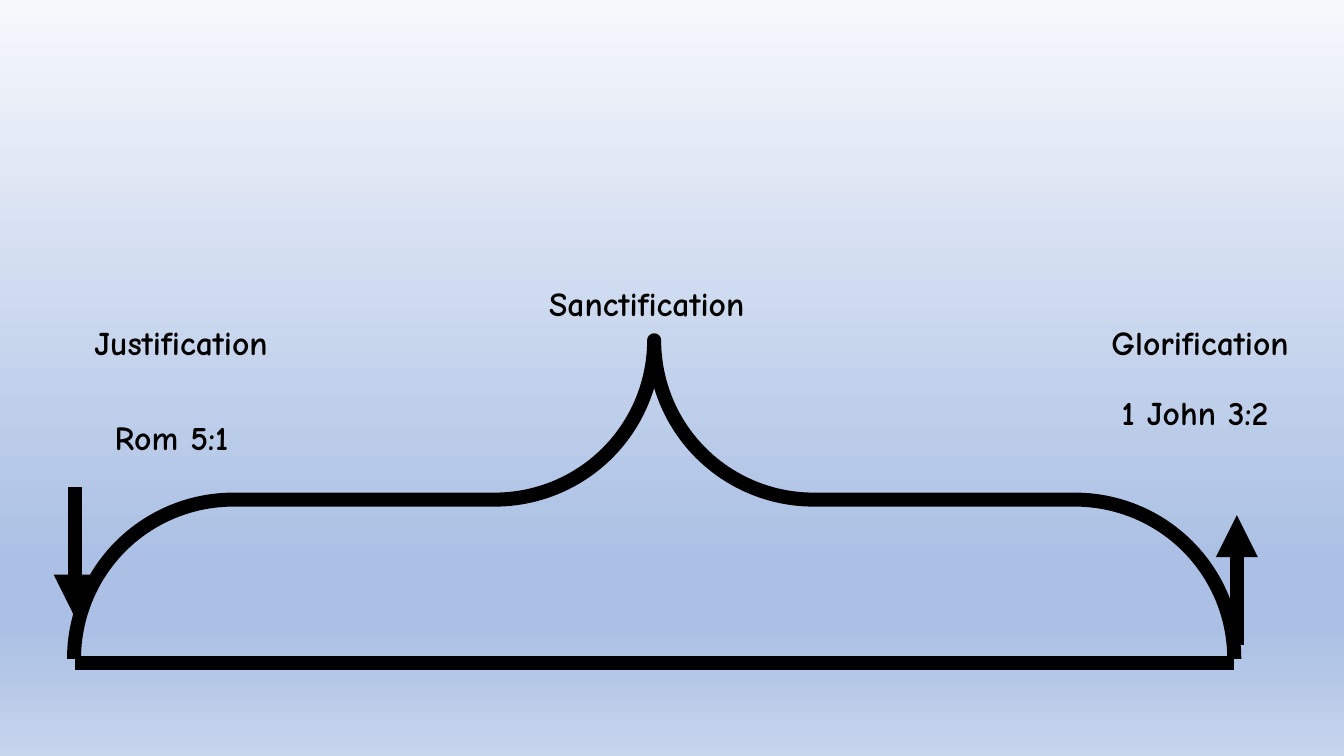
from lxml.etree import SubElement
from pptx import Presentation
from pptx.dml.color import RGBColor
from pptx.enum.shapes import MSO_CONNECTOR, MSO_SHAPE
from pptx.enum.text import MSO_AUTO_SIZE
from pptx.oxml.ns import qn
from pptx.util import Cm, Pt

BLACK = RGBColor(0x00, 0x00, 0x00)
PALE = RGBColor(0xF6, 0xF8, 0xFC)
BLUE = RGBColor(0xAB, 0xC0, 0xE4)
LIGHT_BLUE = RGBColor(0xC7, 0xD5, 0xED)
FONT = "Comic Neue"
STROKE = Pt(10)

presentation = Presentation()
presentation.slide_width = Cm(33.87)
presentation.slide_height = Cm(19.05)
slide = presentation.slides.add_slide(presentation.slide_layouts[6])


def add_label(text, left, top, width, height=1.27, size=24, bold=True, color=BLACK):
    label = slide.shapes.add_textbox(Cm(left), Cm(top), Cm(width), Cm(height))
    frame = label.text_frame
    frame.word_wrap = False
    frame.auto_size = MSO_AUTO_SIZE.SHAPE_TO_FIT_TEXT
    run = frame.paragraphs[0].add_run()
    run.text = text
    run.font.name = FONT
    run.font.size = Pt(size)
    run.font.bold = bold
    run.font.color.rgb = color


sky = slide.background.fill
sky.gradient()
sky.gradient_angle = 270
stops = slide.background._cSld.find(".//" + qn("a:gsLst"))
for stop in list(stops):
    stops.remove(stop)
for percent, color in [(0, PALE), (74, BLUE), (83, BLUE), (100, LIGHT_BLUE)]:
    stop = SubElement(stops, qn("a:gs"), pos=str(percent * 1000))
    SubElement(stop, qn("a:srgbClr"), val=str(color))

life_start, life_end = 1.88, 31.09
for x1, y1, x2, y2, has_arrow in [
    (life_start, 16.71, life_end, 16.71, False),
    (life_start, 12.27, life_start, 15.54, True),
    (31.17, 16.26, 31.17, 12.98, True),
]:
    line = slide.shapes.add_connector(
        MSO_CONNECTOR.STRAIGHT, Cm(x1), Cm(y1), Cm(x2), Cm(y2)
    )
    line.line.color.rgb = BLACK
    line.line.width = STROKE
    if has_arrow:
        SubElement(line.line._get_or_add_ln(), qn("a:tailEnd"), type="triangle")
    SubElement(line._element.spPr, qn("a:effectLst"))

brace = slide.shapes.add_shape(
    MSO_SHAPE.LEFT_BRACE, Cm(12.47), Cm(-2.03), Cm(8.03), Cm(29.24)
)
brace.rotation = 90
brace.adjustments[0] = 0.5
brace.adjustments[1] = 0.5
brace.shadow.inherit = False
brace.fill.background()
brace.line.color.rgb = BLACK
brace.line.width = STROKE

for text, left, top, width in [
    ("Justification", 2.13, 7.98, 5.69),
    ("Sanctification", 13.59, 7.01, 6.25),
    ("Glorification", 27.76, 7.98, 5.54),
    ("1 John 3:2", 28.02, 9.75, 5.16),
    ("Rom 5:1", 2.64, 10.39, 3.96),
]:
    add_label(text, left, top, width)

presentation.save("out.pptx")
